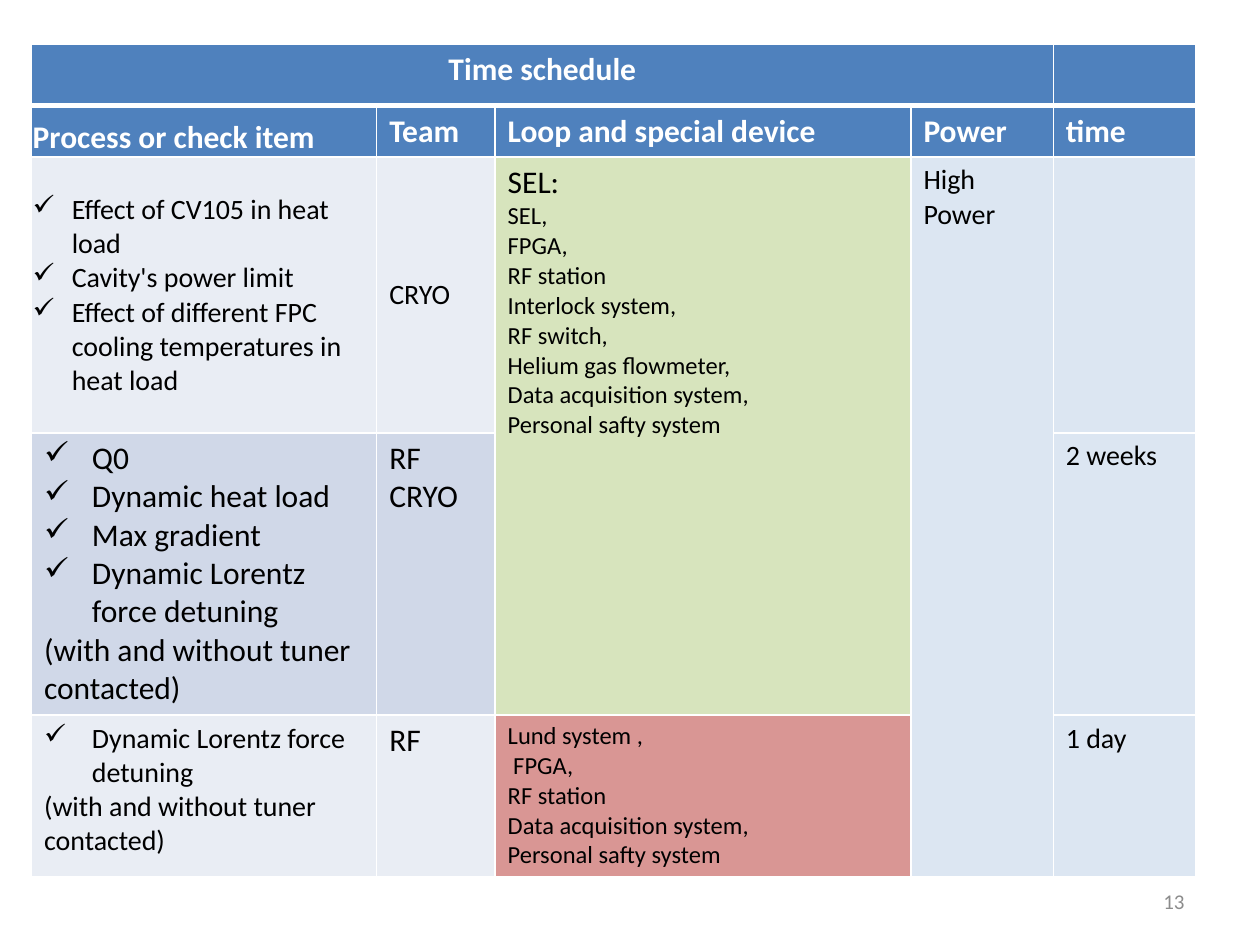
"""Build the time schedule slide with its table and page number."""
import pptx
import pptx.dml.color
import pptx.enum.text
import pptx.oxml
import pptx.oxml.ns
import pptx.util

inch, point = pptx.util.Inches, pptx.util.Pt
anchors, aligns = pptx.enum.text.MSO_ANCHOR, pptx.enum.text.PP_ALIGN


def paint(target, colour):
    if hasattr(target, "solid"):
        target.solid()
        target = target.fore_color
    target.rgb = pptx.dml.color.RGBColor.from_string(colour)


def write(frame, lines, colour="000000", bold=False, align=aligns.LEFT, indent=0.38):
    for index, (size, text) in enumerate(lines):
        para = frame.paragraphs[0] if index == 0 else frame.add_paragraph()
        para.alignment = align
        if text.startswith("✓"):
            text = text[1:]
            settings = para._p.get_or_add_pPr()
            settings.set("marL", str(inch(indent)))
            settings.set("indent", str(-inch(indent)))
            settings.append(pptx.oxml.parse_xml(
                f'<a:buChar {pptx.oxml.ns.nsdecls("a")} char="✓"/>'))
        span = para.add_run()
        span.text = text
        for name, value in {"size": point(size), "name": "Calibri", "bold": bold}.items():
            setattr(span.font, name, value)
        paint(span.font.color, colour)


deck = pptx.Presentation()
deck.slide_width, deck.slide_height = inch(10), inch(7.5)
page = deck.slides.add_slide(deck.slide_layouts[6])

columns = [2.74, 0.94, 3.3, 1.13, 1.13]
rows = [0.49, 0.4, 2.19, 2.24, 1.28]
frame = page.shapes.add_table(
    len(rows), len(columns), inch(0.25), inch(0.35), inch(sum(columns)), inch(sum(rows)))
table = frame.table
table.first_row = table.horz_banding = False
for column, width in zip(table.columns, columns):
    column.width = inch(width)
for row, height in zip(table.rows, rows):
    row.height = inch(height)

for row in range(len(rows)):
    for column in range(len(columns)):
        settings = table.cell(row, column)._tc.get_or_add_tcPr()
        thick = {0: "B", 1: "T"}.get(row)
        for side in "LRTB":
            width = point(3 if side == thick else 1)
            settings.append(pptx.oxml.parse_xml(
                f'<a:ln{side} {pptx.oxml.ns.nsdecls("a")} w="{width}"><a:solidFill>'
                f'<a:srgbClr val="FFFFFF"/></a:solidFill></a:ln{side}>'))

for first, last in [((0, 0), (0, 3)), ((2, 2), (3, 2)), ((2, 3), (4, 3))]:
    table.cell(*first).merge(table.cell(*last))

header, light, medium, pale, green, red = "4F81BD", "E9EDF4", "D0D8E8", "DCE6F2", "D7E4BD", "D99694"
heading = {"colour": "FFFFFF", "bold": True}
tight = {"margin_left": inch(0.01), "margin_right": inch(0.01),
         "margin_top": inch(0.01), "margin_bottom": 0}
middle = {"vertical_anchor": anchors.MIDDLE}
devices = ["Data acquisition system,", "Personal safty system"]

cells = [
    (0, 0, header, [(18, ["Time schedule"])], {**heading, "align": aligns.CENTER}, {}),
    (0, 4, header, [], {}, {}),
    (1, 0, header, [(18, ["Process or check item"])], heading,
     {**tight, "vertical_anchor": anchors.BOTTOM}),
    (1, 1, header, [(18, ["Team"])], heading, {}),
    (1, 2, header, [(18, ["Loop and special device"])], heading, {}),
    (1, 3, header, [(18, ["Power"])], heading, {}),
    (1, 4, header, [(18, ["time"])], heading, {}),
    (2, 0, light, [(16, ["✓Effect of CV105 in heat load", "✓Cavity's power limit",
                         "✓Effect of different FPC cooling temperatures in heat load"])],
     {"indent": 0.31}, {**tight, **middle}),
    (2, 1, light, [(16, ["CRYO"])], {}, middle),
    (2, 2, green, [(18, ["SEL:"]),
                   (14, ["SEL,", "FPGA,", "RF station", "Interlock system,", "RF switch,",
                         "Helium gas flowmeter,", *devices])], {}, {}),
    (2, 3, pale, [(16, ["High", "Power"])], {}, {}),
    (2, 4, pale, [], {}, {}),
    (3, 0, medium, [(18, ["✓Q0", "✓Dynamic heat load", "✓Max gradient",
                          "✓Dynamic Lorentz force detuning",
                          "(with and without tuner", "contacted)"])], {}, {}),
    (3, 1, medium, [(18, ["RF", "CRYO"])], {}, {}),
    (3, 4, pale, [(16, ["2 weeks"])], {}, {}),
    (4, 0, light, [(16, ["✓Dynamic Lorentz force detuning",
                         "(with and without tuner contacted)"])], {}, {}),
    (4, 1, light, [(18, ["RF"])], {}, {}),
    (4, 2, red, [(14, ["Lund system ,", " FPGA,", "RF station", *devices])], {}, {}),
    (4, 4, pale, [(16, ["1 day"])], {}, {}),
]
for row, column, fill, groups, text_format, cell_format in cells:
    cell = table.cell(row, column)
    paint(cell.fill, fill)
    for name, value in cell_format.items():
        setattr(cell, name, value)
    lines = [(size, text) for size, texts in groups for text in texts]
    write(cell.text_frame, lines, **text_format)

box = page.shapes.add_textbox(inch(7.17), inch(6.95), inch(2.33), inch(0.4))
for name, value in {"word_wrap": True, **middle}.items():
    setattr(box.text_frame, name, value)
write(box.text_frame, [(12, "13")], colour="8C8C8C", align=aligns.RIGHT)

deck.save("out.pptx")
